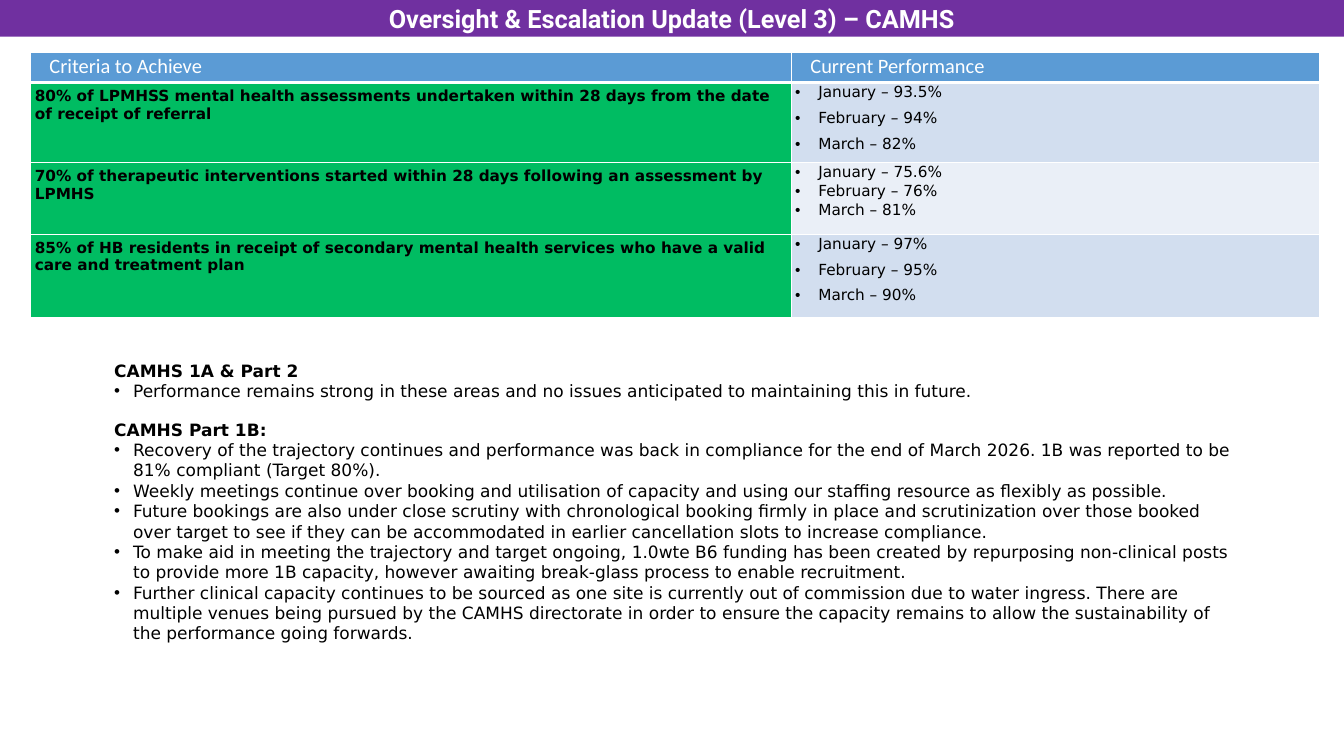
from lxml import etree
from pptx import Presentation
from pptx.dml.color import RGBColor
from pptx.enum.shapes import MSO_SHAPE
from pptx.enum.text import MSO_ANCHOR, MSO_AUTO_SIZE, PP_ALIGN
from pptx.oxml.ns import qn
from pptx.util import Inches, Pt

RECTANGLE = MSO_SHAPE.RECTANGLE
MIDDLE = MSO_ANCHOR.MIDDLE
TOP = MSO_ANCHOR.TOP
GROW = MSO_AUTO_SIZE.SHAPE_TO_FIT_TEXT
CENTER = PP_ALIGN.CENTER

COLORS = {
    "banner": "7030A0", "header": "5B9BD5", "met": "00BC62",
    "band_dark": "D2DEEF", "band_light": "EAEFF7",
    "white": "FFFFFF", "black": "000000",
}
FONTS = {
    "title": {"name": "Roboto", "size": Pt(29.7), "bold": True},
    "header": {"name": "Calibri", "size": Pt(24), "bold": False},
    "criterion": {"name": "DejaVu Sans", "size": Pt(18), "bold": True},
    "result": {"name": "DejaVu Sans", "size": Pt(18), "bold": False},
    "heading": {"name": "DejaVu Sans", "size": Pt(20), "bold": True},
    "point": {"name": "DejaVu Sans", "size": Pt(20), "bold": False},
}
HEADERS = ["Criteria to Achieve", "Current Performance"]
# criterion, monthly results, band, points after each result, row height
CRITERIA = [
    ("80% of LPMHSS mental health assessments undertaken within 28 days from the date of receipt of referral",
     ["January – 93.5%", "February – 94%", "March – 82%"], "band_dark", 8, 1.31),
    ("70% of therapeutic interventions started within 28 days following an assessment by LPMHS",
     ["January – 75.6%", "February – 76%", "March – 81%"], "band_light", 0, 1.17),
    ("85% of HB residents in receipt of secondary mental health services who have a valid care and treatment plan",
     ["January – 97%", "February – 95%", "March – 90%"], "band_dark", 8, 1.36),
]
COMMENTARY = [
    ("CAMHS 1A & Part 2", [
        "Performance remains strong in these areas and no issues anticipated to maintaining this in future.",
    ]),
    ("CAMHS Part 1B:", [
        "Recovery of the trajectory continues and performance was back in compliance for the end of March 2026. "
        "1B was reported to be 81% compliant (Target 80%).",
        "Weekly meetings continue over booking and utilisation of capacity and using our staffing resource as "
        "flexibly as possible.",
        "Future bookings are also under close scrutiny with chronological booking firmly in place and "
        "scrutinization over those booked over target to see if they can be accommodated in earlier "
        "cancellation slots to increase compliance.",
        "To make aid in meeting the trajectory and target ongoing, 1.0wte B6 funding has been created by "
        "repurposing non-clinical posts to provide more 1B capacity, however awaiting break-glass process to "
        "enable recruitment.",
        "Further clinical capacity continues to be sourced as one site is currently out of commission due to "
        "water ingress. There are multiple venues being pursued by the CAMHS directorate in order to ensure "
        "the capacity remains to allow the sustainability of the performance going forwards.",
    ]),
]


def apply_format(target, values):
    for name, value in values.items():
        setattr(target, name, value)


class SlideBuilder:
    def __init__(self, slide):
        self.slide = slide

    def fill(self, target, color):
        target.fill.solid()
        target.fill.fore_color.rgb = RGBColor.from_string(COLORS[color])

    def paragraph(self, frame, text, font, color="black", indent=0, bullet=False, **layout):
        """Write into the empty first paragraph, or append a new one."""
        first = frame.paragraphs[0]
        para = frame.add_paragraph() if first.runs else first
        props = para._p.get_or_add_pPr()
        props.set("marL", str(Inches(indent)))
        props.set("indent", str(-Inches(indent) if bullet else 0))
        if bullet:
            etree.SubElement(props, qn("a:buFont"), typeface="Arial")
            etree.SubElement(props, qn("a:buChar"), char="•")
        apply_format(para, layout)
        run = para.add_run()
        run.text = text
        apply_format(run.font, FONTS[font])
        run.font.color.rgb = RGBColor.from_string(COLORS[color])

    def banner(self, text, width, height):
        bar = self.slide.shapes.add_shape(RECTANGLE, 0, 0, Inches(width), Inches(height))
        bar.shadow.inherit = False
        self.fill(bar, "banner")
        bar.line.fill.background()
        apply_format(bar.text_frame, {"word_wrap": True, "vertical_anchor": MIDDLE})
        self.paragraph(bar.text_frame, text, "title", "white", alignment=CENTER)

    def cell(self, cell, color, side_margin, end_margin, bottom_line=1):
        """Give a table cell its margins, white borders and fill."""
        apply_format(cell, {
            "margin_left": Inches(side_margin), "margin_right": Inches(side_margin),
            "margin_top": Inches(end_margin), "margin_bottom": Inches(end_margin),
            "vertical_anchor": TOP,
        })
        props = cell._tc.get_or_add_tcPr()
        for side, points in {"L": 1, "R": 1, "T": 1, "B": bottom_line}.items():
            border = etree.SubElement(props, qn(f"a:ln{side}"), w=str(Pt(points)))
            solid = etree.SubElement(border, qn("a:solidFill"))
            etree.SubElement(solid, qn("a:srgbClr"), val=COLORS["white"])
        self.fill(cell, color)
        return cell.text_frame

    def criteria_table(self, left, top, column_widths, header_height):
        heights = [header_height] + [row[-1] for row in CRITERIA]
        table = self.slide.shapes.add_table(
            len(heights), len(column_widths), Inches(left), Inches(top),
            Inches(sum(column_widths)), Inches(sum(heights))).table
        for column, width in zip(table.columns, column_widths):
            column.width = Inches(width)
        for row, height in zip(table.rows, heights):
            row.height = Inches(height)
        for index, header in enumerate(HEADERS):
            frame = self.cell(table.cell(0, index), "header", 0.07, 0, bottom_line=3)
            self.paragraph(frame, header, "header", "white", indent=0.25, line_spacing=1.07)
        for index, (criterion, results, band, gap, _) in enumerate(CRITERIA, 1):
            frame = self.cell(table.cell(index, 0), "met", 0.08, 0.08)
            self.paragraph(frame, criterion, "criterion")
            frame = self.cell(table.cell(index, 1), band, 0.07, 0)
            for result in results:
                self.paragraph(frame, result, "result", indent=0.38, bullet=True,
                               line_spacing=1.07, space_after=Pt(gap))

    def commentary(self, left, top, width, height):
        box = self.slide.shapes.add_textbox(Inches(left), Inches(top), Inches(width), Inches(height))
        frame = box.text_frame
        apply_format(frame, {"word_wrap": True, "auto_size": GROW})
        for index, (heading, points) in enumerate(COMMENTARY):
            self.paragraph(frame, heading, "heading", space_before=Pt(21 if index else 0))
            for point in points:
                self.paragraph(frame, point, "point", indent=0.31, bullet=True)


def main():
    deck = Presentation()
    apply_format(deck, {"slide_width": Inches(21.99), "slide_height": Inches(12.37)})
    builder = SlideBuilder(deck.slides.add_slide(deck.slide_layouts[6]))
    builder.banner("Oversight & Escalation Update (Level 3) – CAMHS", 21.99, 0.6)
    builder.criteria_table(0.49, 0.85, [12.45, 8.64], 0.5)
    builder.commentary(1.77, 5.85, 18.53, 4.81)
    deck.save("out.pptx")


if __name__ == "__main__":
    main()
